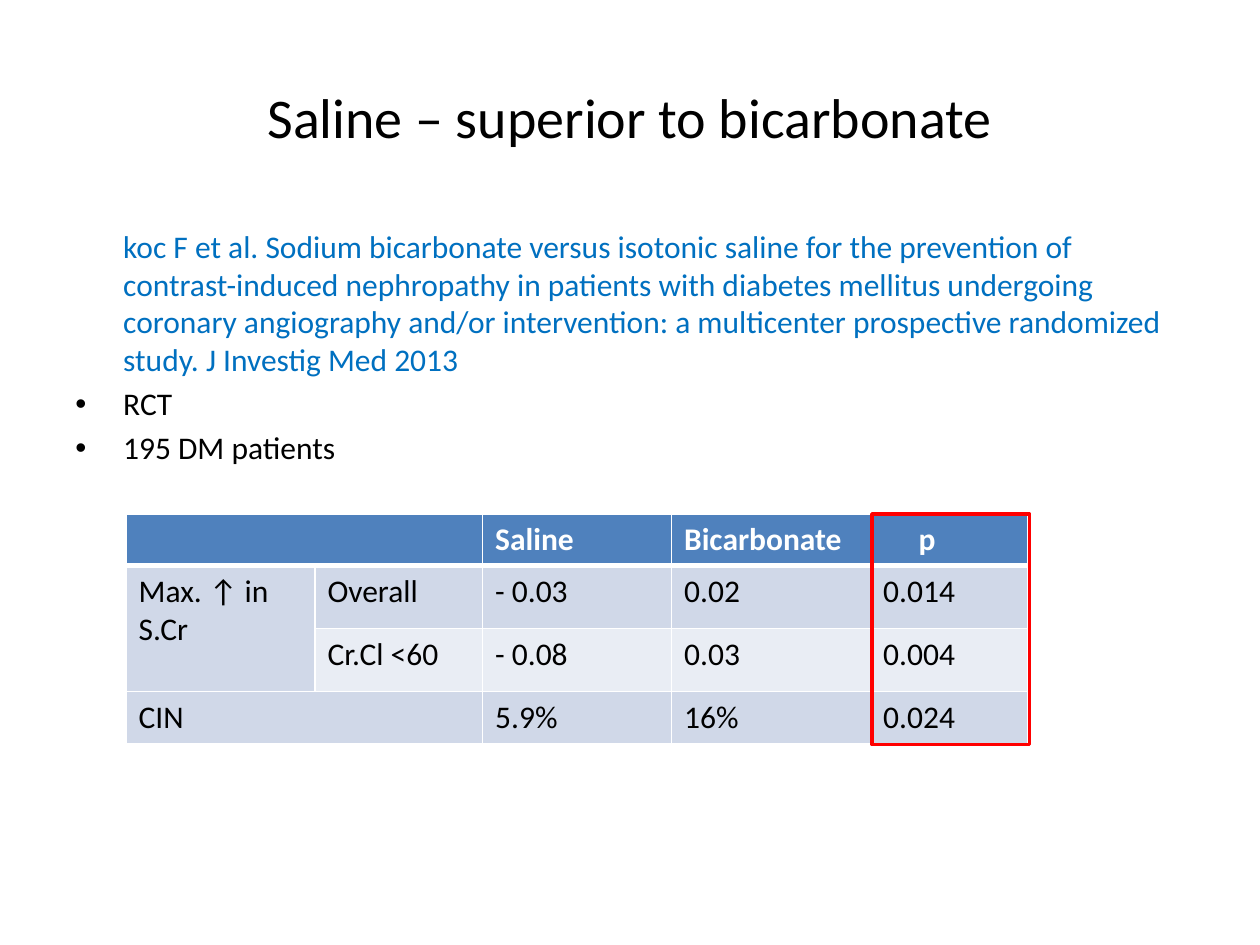
from pptx import Presentation
from pptx.dml.color import RGBColor
from pptx.enum.shapes import MSO_SHAPE
from pptx.enum.text import MSO_ANCHOR, PP_ALIGN
from pptx.oxml.ns import qn
from pptx.util import Inches, Pt
from lxml.etree import SubElement

BLACK = RGBColor(0x00, 0x00, 0x00)
WHITE = RGBColor(0xFF, 0xFF, 0xFF)
CITATION_BLUE = RGBColor(0x00, 0x70, 0xC0)
HEADER_BLUE = RGBColor(0x4F, 0x81, 0xBD)
BAND_DARK = RGBColor(0xD0, 0xD8, 0xE8)
BAND_LIGHT = RGBColor(0xE9, 0xED, 0xF4)
RED = RGBColor(0xFF, 0x00, 0x00)


def write(paragraph, text, size=18, color=BLACK, bold=False, align=PP_ALIGN.LEFT,
          before=0, indent=None, bullet=False):
    paragraph.alignment = align
    paragraph.space_before = Pt(before)
    run = paragraph.add_run()
    run.text = text
    run.font.name = "Calibri"
    run.font.size = Pt(size)
    run.font.bold = bold
    run.font.color.rgb = color
    properties = paragraph._p.get_or_add_pPr()
    if indent:
        properties.set("marL", str(Inches(indent)))
        properties.set("indent", str(-Inches(indent) if bullet else 0))
    if bullet:
        SubElement(properties, qn("a:buFont"), typeface="Arial")
        SubElement(properties, qn("a:buChar"), char="•")


def set_borders(cell, bottom_width):
    properties = cell._tc.get_or_add_tcPr()
    widths = {"a:lnL": 1, "a:lnR": 1, "a:lnT": 1, "a:lnB": bottom_width}
    for position, (side, width) in enumerate(widths.items()):
        line = SubElement(properties, qn(side), w=str(Pt(width)))
        fill = SubElement(line, qn("a:solidFill"))
        SubElement(fill, qn("a:srgbClr"), val=str(WHITE))
        properties.insert(position, line)


presentation = Presentation()
presentation.slide_width = Inches(10)
presentation.slide_height = Inches(7.5)
slide = presentation.slides.add_slide(presentation.slide_layouts[6])

title = slide.shapes.add_textbox(Inches(0.5), Inches(0.3), Inches(9), Inches(1.25)).text_frame
title.word_wrap = True
title.vertical_anchor = MSO_ANCHOR.MIDDLE
write(title.paragraphs[0], "Saline – superior to bicarbonate", size=32, align=PP_ALIGN.CENTER)

body = slide.shapes.add_textbox(Inches(0.5), Inches(1.75), Inches(9), Inches(4.95)).text_frame
body.word_wrap = True
write(body.paragraphs[0],
      "koc F et al. Sodium bicarbonate versus isotonic saline for the prevention of "
      "contrast-induced nephropathy in patients with diabetes mellitus undergoing "
      "coronary angiography and/or intervention: a multicenter prospective randomized "
      "study. J Investig Med 2013",
      color=CITATION_BLUE, before=3.6, indent=0.38)
for point in ("RCT", "195 DM patients"):
    write(body.add_paragraph(), point, before=3.6, indent=0.38, bullet=True)

rows = [
    ("", "", "Saline", "Bicarbonate", "p"),
    ("Max. ↑ in S.Cr", "Overall", "- 0.03", "0.02", "0.014"),
    ("", "Cr.Cl <60", "- 0.08", "0.03", "0.004"),
    ("CIN", "", "5.9%", "16%", "0.024"),
]
row_heights = [0.41, 0.5, 0.5, 0.41]
column_widths = [1.5, 1.33, 1.5, 1.58, 1.25]
row_fills = [HEADER_BLUE, BAND_DARK, BAND_LIGHT, BAND_DARK]

table = slide.shapes.add_table(len(rows), len(column_widths), Inches(1), Inches(4.08),
                               Inches(sum(column_widths)), Inches(sum(row_heights))).table
for column, width in zip(table.columns, column_widths):
    column.width = Inches(width)
for row, height in zip(table.rows, row_heights):
    row.height = Inches(height)

for row_index, values in enumerate(rows):
    is_header = row_index == 0
    for column_index, value in enumerate(values):
        cell = table.cell(row_index, column_index)
        cell.fill.solid()
        cell.fill.fore_color.rgb = row_fills[row_index]
        set_borders(cell, 3 if is_header else 1)
        if value:
            write(cell.text_frame.paragraphs[0], value,
                  color=WHITE if is_header else BLACK, bold=is_header)

table.cell(0, 4).margin_left = Inches(0.38)
table.cell(0, 0).merge(table.cell(0, 1))
table.cell(1, 0).merge(table.cell(2, 0))
table.cell(3, 0).merge(table.cell(3, 1))

p_value_frame = slide.shapes.add_shape(MSO_SHAPE.RECTANGLE, Inches(6.92), Inches(4.08),
                                       Inches(1.25), Inches(1.83))
p_value_frame.shadow.inherit = False
p_value_frame.fill.background()
p_value_frame.line.color.rgb = RED
p_value_frame.line.width = Pt(2)

presentation.save("out.pptx")
